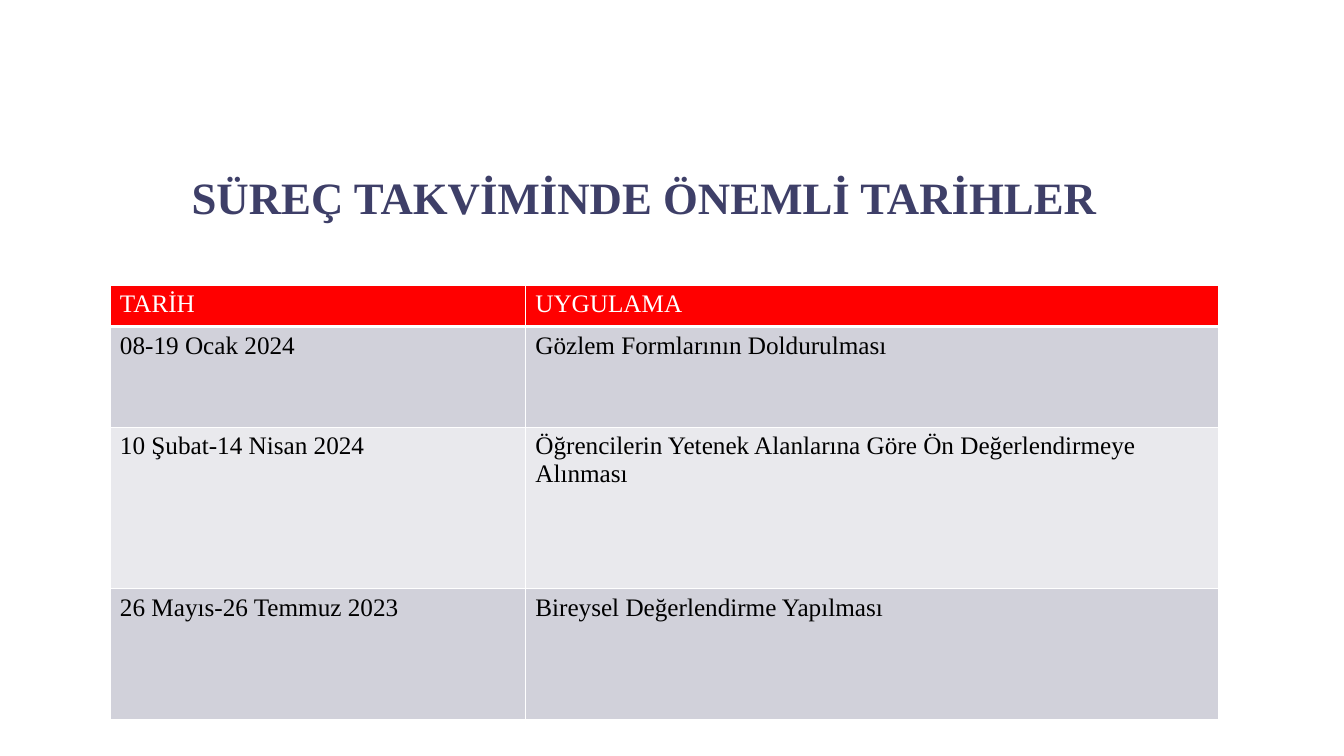
from dataclasses import dataclass

import lxml.etree
import pptx
import pptx.dml.color
import pptx.enum.text
import pptx.oxml.ns
import pptx.util

RGBColor = pptx.dml.color.RGBColor
WHITE = RGBColor(0xFF, 0xFF, 0xFF)
BLACK = RGBColor(0x00, 0x00, 0x00)
RED = RGBColor(0xFF, 0x00, 0x00)
NAVY = RGBColor(0x3E, 0x3F, 0x68)
BANDS = (RGBColor(0xD1, 0xD1, 0xDA), RGBColor(0xE9, 0xE9, 0xED))

FONT = "Times New Roman"
SLIDE_W, SLIDE_H = 13.33, 7.5
TABLE_LEFT, TABLE_TOP = 1.09, 2.83
COLUMNS = (4.12, 6.88)
THIN, THICK = 1, 3


@dataclass(frozen=True)
class CalendarRow:
    date: str
    activity: str
    height: float


ROWS = (
    CalendarRow("TARİH", "UYGULAMA", 0.41),
    CalendarRow("08-19 Ocak 2024", "Gözlem Formlarının Doldurulması", 1.0),
    CalendarRow("10 Şubat-14 Nisan 2024",
                "Öğrencilerin Yetenek Alanlarına Göre Ön Değerlendirmeye\nAlınması", 1.6),
    CalendarRow("26 Mayıs-26 Temmuz 2023", "Bireysel Değerlendirme Yapılması", 1.3),
)


def write_text(tf, text: str, *, size: float, color: RGBColor, bold: bool = False) -> None:
    """Fill a text frame, one paragraph per line of text."""
    for i, line in enumerate(text.split("\n")):
        p = tf.paragraphs[0] if i == 0 else tf.add_paragraph()
        p.alignment = pptx.enum.text.PP_ALIGN.LEFT
        r = p.add_run()
        r.text = line
        r.font.name = FONT
        r.font.size = pptx.util.Pt(size)
        r.font.bold = bold
        r.font.color.rgb = color


def set_borders(cell, *, top: float = THIN, bottom: float = THIN) -> None:
    """Draw white borders, with widths in points."""
    qn = pptx.oxml.ns.qn
    tc_pr = cell._tc.get_or_add_tcPr()
    for side, width in (("L", THIN), ("R", THIN), ("T", top), ("B", bottom)):
        ln = lxml.etree.SubElement(tc_pr, qn(f"a:ln{side}"), w=str(pptx.util.Pt(width)))
        fill = lxml.etree.SubElement(ln, qn("a:solidFill"))
        lxml.etree.SubElement(fill, qn("a:srgbClr"), val=str(WHITE))


def add_title(slide) -> None:
    sp = slide.shapes.title
    sp.left, sp.top = pptx.util.Inches(1.8), pptx.util.Inches(1.53)
    sp.width, sp.height = pptx.util.Inches(9.68), pptx.util.Inches(0.84)
    tf = sp.text_frame
    tf.word_wrap = True
    tf.vertical_anchor = pptx.enum.text.MSO_ANCHOR.MIDDLE
    write_text(tf, "SÜREÇ TAKVİMİNDE ÖNEMLİ TARİHLER", size=32, color=NAVY, bold=True)


def add_calendar(slide) -> None:
    table = slide.shapes.add_table(
        len(ROWS), len(COLUMNS),
        pptx.util.Inches(TABLE_LEFT), pptx.util.Inches(TABLE_TOP),
        pptx.util.Inches(sum(COLUMNS)),
        pptx.util.Inches(sum(row.height for row in ROWS))).table
    for column, width in zip(table.columns, COLUMNS):
        column.width = pptx.util.Inches(width)
    for i, row in enumerate(ROWS):
        table.rows[i].height = pptx.util.Inches(row.height)
        header = i == 0
        for j, text in enumerate((row.date, row.activity)):
            cell = table.cell(i, j)
            set_borders(cell, top=THICK if i == 1 else THIN,
                        bottom=THICK if header else THIN)
            cell.fill.solid()
            cell.fill.fore_color.rgb = RED if header else BANDS[(i - 1) % 2]
            write_text(cell.text_frame, text, size=18, color=WHITE if header else BLACK)


def main() -> None:
    prs = pptx.Presentation()
    prs.slide_width = pptx.util.Inches(SLIDE_W)
    prs.slide_height = pptx.util.Inches(SLIDE_H)
    # Title-only layout on a white background
    slide = prs.slides.add_slide(prs.slide_layouts[5])
    slide.background.fill.solid()
    slide.background.fill.fore_color.rgb = WHITE
    add_title(slide)
    add_calendar(slide)
    prs.save("out.pptx")


if __name__ == "__main__":
    main()
